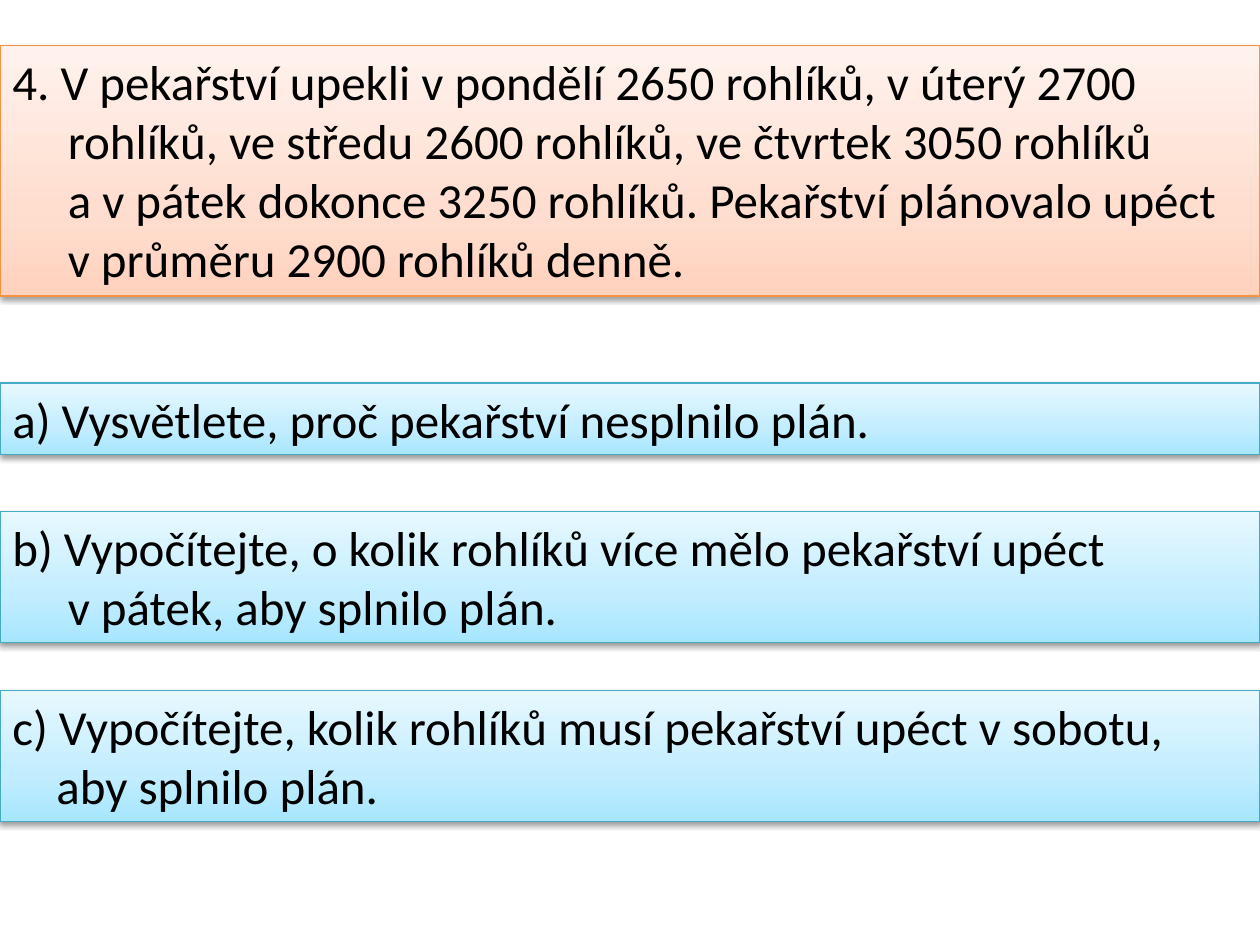
"""Build a maths word-problem slide: one task panel and three question panels."""
import pptx
import pptx.dml.color
import pptx.enum.text
import pptx.oxml
import pptx.oxml.ns
import pptx.util
from pptx.util import Inches

COLORS = {
    "text": "000000",
    "task_line": "F69240",
    "question_line": "46AAC5",
    "shadow": "000000",
}
GRADIENTS = {
    "task": {0: "FFD2BD", 35: "FFDED0", 100: "FFF2ED"},
    "question": {0: "A7E6FF", 35: "C1EDFF", 100: "E7F8FF"},
}
TASK = [
    "4. V pekařství upekli v pondělí 2650 rohlíků, v úterý 2700",
    "rohlíků, ve středu 2600 rohlíků, ve čtvrtek 3050 rohlíků",
    "a v pátek dokonce 3250 rohlíků. Pekařství plánovalo upéct",
    "v průměru 2900 rohlíků denně.",
]
QUESTION_A = ["a) Vysvětlete, proč pekařství nesplnilo plán."]
QUESTION_B = [
    "b) Vypočítejte, o kolik rohlíků více mělo pekařství upéct",
    "v pátek, aby splnilo plán.",
]
QUESTION_C = [
    "c) Vypočítejte, kolik rohlíků musí pekařství upéct v sobotu,",
    "aby splnilo plán.",
]
NS = pptx.oxml.ns.nsdecls("a")


def rgb(name):
    return pptx.dml.color.RGBColor.from_string(COLORS[name])


def fill_gradient(sp, stops):
    sp.fill.gradient()
    sp.fill.gradient_angle = 90
    gs_list = sp.element.spPr.find(".//" + pptx.oxml.ns.qn("a:gsLst"))
    for gs in list(gs_list):
        gs_list.remove(gs)
    for pos, color in stops.items():
        gs_list.append(pptx.oxml.parse_xml(
            f'<a:gs {NS} pos="{pos * 1000}"><a:srgbClr val="{color}"/></a:gs>'))


def add_shadow(sp):
    sp.element.spPr.append(pptx.oxml.parse_xml(
        f'<a:effectLst {NS}><a:outerShdw blurRad="{pptx.util.Pt(3.1)}" '
        f'dist="{pptx.util.Pt(1.6)}" dir="5400000" rotWithShape="0">'
        f'<a:srgbClr val="{COLORS["shadow"]}"><a:alpha val="38000"/></a:srgbClr>'
        '</a:outerShdw></a:effectLst>'))


def add_panel(s, kind, top, height, lines, indent=0.44):
    sp = s.shapes.add_textbox(0, Inches(top), Inches(10), Inches(height))
    fill_gradient(sp, GRADIENTS[kind])
    sp.line.color.rgb = rgb(kind + "_line")
    sp.line.width = pptx.util.Pt(0.75)
    add_shadow(sp)
    tf = sp.text_frame
    tf.word_wrap = True
    tf.auto_size = pptx.enum.text.MSO_AUTO_SIZE.SHAPE_TO_FIT_TEXT
    tf.text = "\n".join(lines)
    for i, p in enumerate(tf.paragraphs):
        if i:
            p._p.get_or_add_pPr().set("marL", str(Inches(indent)))
        p.font.name = "Calibri"
        p.font.size = pptx.util.Pt(28)
        p.font.color.rgb = rgb("text")


def main():
    prs = pptx.Presentation()
    prs.slide_width, prs.slide_height = Inches(10), Inches(7.5)
    s = prs.slides.add_slide(prs.slide_layouts[6])
    add_panel(s, "task", 0.36, 1.99, TASK)
    add_panel(s, "question", 3.04, 0.57, QUESTION_A)
    add_panel(s, "question", 4.06, 1.04, QUESTION_B)
    add_panel(s, "question", 5.48, 1.04, QUESTION_C, indent=0.35)
    prs.save("out.pptx")


if __name__ == "__main__":
    main()
